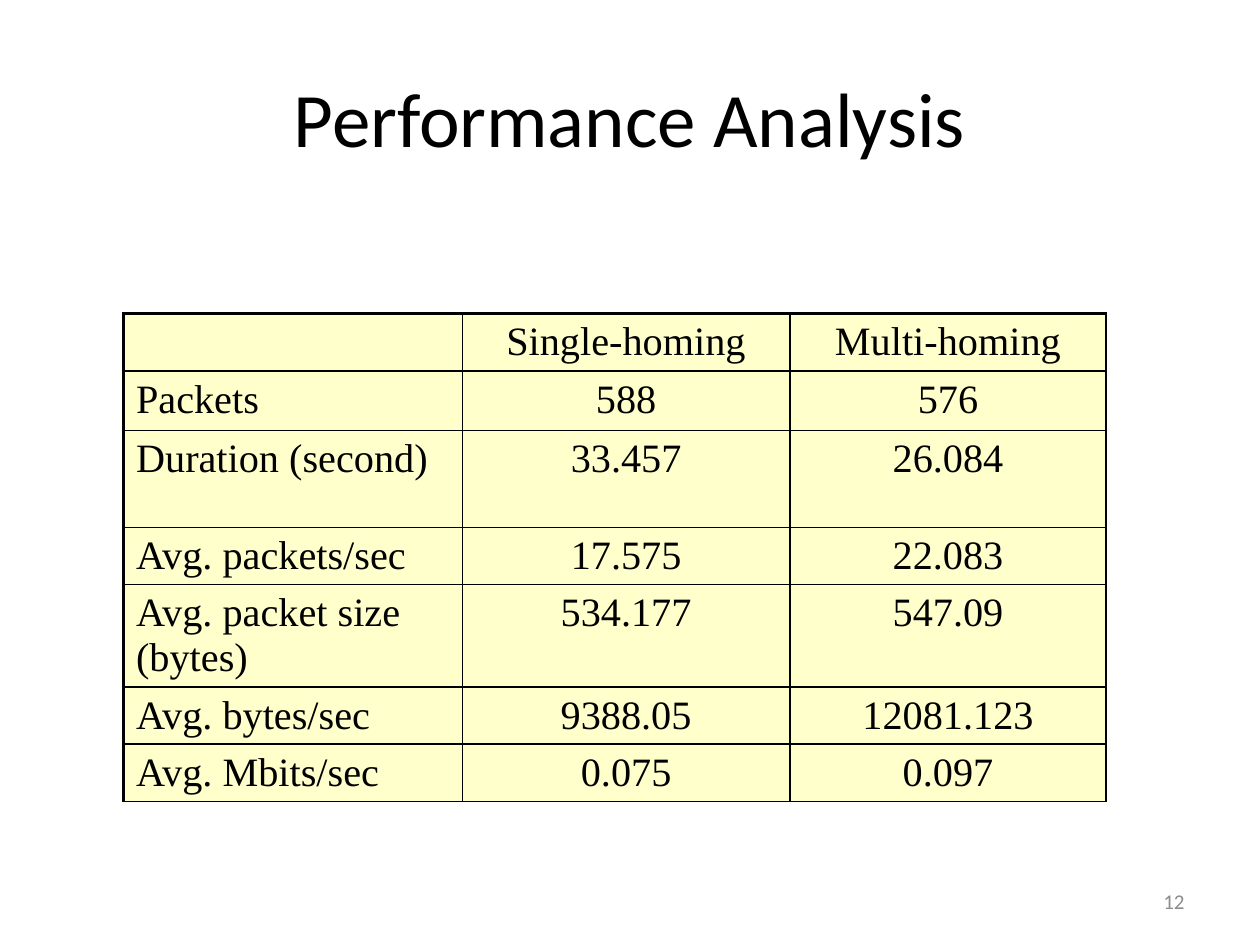
from lxml import etree
from pptx import Presentation
from pptx import util as u
from pptx.dml.color import RGBColor
from pptx.enum import text
from pptx.oxml import ns

BLACK, CREAM, GREY = "000000", "FFFFCC", "8C8C8C"
CENTER, LEFT, RIGHT = text.PP_ALIGN.CENTER, text.PP_ALIGN.LEFT, text.PP_ALIGN.RIGHT


def write(frame, words, size, font, color, align):
    para = frame.paragraphs[0]
    para.alignment = align
    span = para.add_run()
    span.text = words
    span.font.size = u.Pt(size)
    span.font.name = font
    span.font.color.rgb = RGBColor.from_string(color)


def add_border(cell, side, points):
    line = etree.SubElement(cell._tc.get_or_add_tcPr(), ns.qn("a:" + side), w=str(u.Pt(points)))
    fill = etree.SubElement(line, ns.qn("a:solidFill"))
    etree.SubElement(fill, ns.qn("a:srgbClr"), val=BLACK)


deck = Presentation()
deck.slide_width, deck.slide_height = u.Inches(10), u.Inches(7.5)
page = deck.slides.add_slide(deck.slide_layouts[5])

title = page.shapes.title
title.left, title.top = u.Inches(0.5), u.Inches(0.3)
title.width, title.height = u.Inches(9), u.Inches(1.25)
title.text_frame.vertical_anchor = text.MSO_ANCHOR.MIDDLE
write(title.text_frame, "Performance Analysis", 44, "Calibri", BLACK, CENTER)

results = [
    ("", "Single-homing", "Multi-homing"),
    ("Packets", "588", "576"),
    ("Duration (second)", "33.457", "26.084"),
    ("Avg. packets/sec", "17.575", "22.083"),
    ("Avg. packet size (bytes)", "534.177", "547.09"),
    ("Avg. bytes/sec", "9388.05", "12081.123"),
    ("Avg. Mbits/sec", "0.075", "0.097"),
]
widths = [2.69, 2.6, 2.51]
heights = [0.43, 0.47, 0.77, 0.45, 0.45, 0.45, 0.45]

table = page.shapes.add_table(
    len(results), len(widths), u.Inches(0.98), u.Inches(2.49),
    u.Inches(sum(widths)), u.Inches(sum(heights)),
).table
table.first_row = table.horz_banding = False
for column, width in zip(table.columns, widths):
    column.width = u.Inches(width)
for row, height in zip(table.rows, heights):
    row.height = u.Inches(height)

for r, record in enumerate(results):
    for c, words in enumerate(record):
        cell = table.cell(r, c)
        add_border(cell, "lnL", 2.25 if c == 0 else 1)
        add_border(cell, "lnR", 1)
        add_border(cell, "lnT", 2.25 if r == 0 else 1)
        add_border(cell, "lnB", 1)
        cell.fill.solid()
        cell.fill.fore_color.rgb = RGBColor.from_string(CREAM)
        if words:
            write(cell.text_frame, words, 23, "Times New Roman", BLACK, CENTER if c else LEFT)

number = page.shapes.add_textbox(u.Inches(7.17), u.Inches(6.95), u.Inches(2.33), u.Inches(0.4))
number.text_frame.word_wrap = True
number.text_frame.vertical_anchor = text.MSO_ANCHOR.MIDDLE
write(number.text_frame, "12", 12, "Calibri", GREY, RIGHT)

deck.save("out.pptx")
